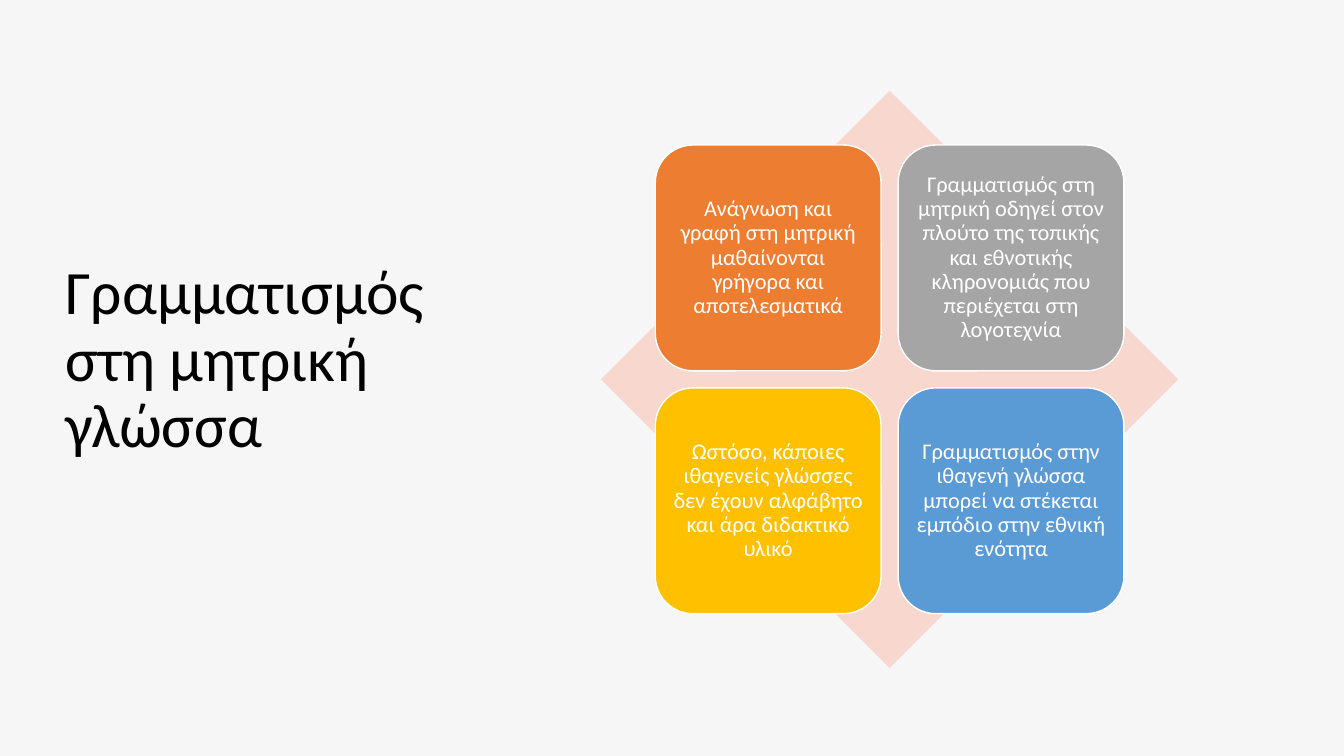
from pptx import Presentation
from pptx.dml.color import RGBColor
from pptx.enum import shapes, text
from pptx.util import Cm, Pt

# Content
TITLE = "Γραμματισμός στη μητρική γλώσσα"
CARDS = [
    ("Ανάγνωση και γραφή στη μητρική μαθαίνονται γρήγορα και αποτελεσματικά", "ED7D31"),
    ("Γραμματισμός στη μητρική οδηγεί στον πλούτο της τοπικής και εθνοτικής "
     "κληρονομιάς που περιέχεται στη λογοτεχνία", "A5A5A5"),
    ("Ωστόσο, κάποιες ιθαγενείς γλώσσες δεν έχουν αλφάβητο και άρα διδακτικό υλικό", "FFC000"),
    ("Γραμματισμός στην ιθαγενή γλώσσα μπορεί να στέκεται εμπόδιο στην εθνική ενότητα", "5B9BD5"),
]
FONT = "Calibri"

# Layout in centimetres
CENTRE_X, CENTRE_Y = 22.42, 9.56
DIAMOND = 14.55
CARD, GAP = 5.69, 0.43
COLUMNS = 2


def paint(color_format, value):
    color_format.rgb = RGBColor.from_string(value)


def add_figure(slide, kind, left, top, size, color):
    shape = slide.shapes.add_shape(kind, Cm(left), Cm(top), Cm(size), Cm(size))
    shape.shadow.inherit = False
    shape.fill.solid()
    paint(shape.fill.fore_color, color)
    shape.line.fill.background()
    return shape


def write(shape, words, size, color, align, inset_x, inset_y):
    frame = shape.text_frame
    frame.text = words
    frame.word_wrap = True
    frame.vertical_anchor = text.MSO_ANCHOR.MIDDLE
    frame.margin_left = frame.margin_right = Cm(inset_x)
    frame.margin_top = frame.margin_bottom = Cm(inset_y)
    paragraph = frame.paragraphs[0]
    paragraph.alignment = align
    paragraph.line_spacing = 0.9
    font = paragraph.runs[0].font
    font.name, font.size = FONT, Pt(size)
    paint(font.color, color)


def main():
    presentation = Presentation()
    presentation.slide_width, presentation.slide_height = Cm(33.87), Cm(19.05)
    slide = presentation.slides.add_slide(presentation.slide_layouts[6])
    slide.background.fill.solid()
    paint(slide.background.fill.fore_color, "F6F6F6")

    # Title
    title = slide.shapes.add_textbox(Cm(1.4), Cm(1.88), Cm(10.03), Cm(14.45))
    write(title, TITLE, 44, "000000", text.PP_ALIGN.LEFT, 0.25, 0.13)

    # Diamond behind the cards
    add_figure(slide, shapes.MSO_SHAPE.DIAMOND, CENTRE_X - DIAMOND / 2,
               CENTRE_Y - DIAMOND / 2, DIAMOND, "F8D7CE")

    # Cards in a centred grid
    reach = CARD + GAP / 2
    for index, (words, color) in enumerate(CARDS):
        row, column = divmod(index, COLUMNS)
        card = add_figure(slide, shapes.MSO_SHAPE.ROUNDED_RECTANGLE,
                          CENTRE_X - reach + column * (CARD + GAP),
                          CENTRE_Y - reach + row * (CARD + GAP), CARD, color)
        card.line.width = Pt(1)
        card.line.fill.solid()
        paint(card.line.color, "FFFFFF")
        write(card, words, 16, "FFFFFF", text.PP_ALIGN.CENTER, 0.17, 0.17)

    presentation.save("out.pptx")


if __name__ == "__main__":
    main()
